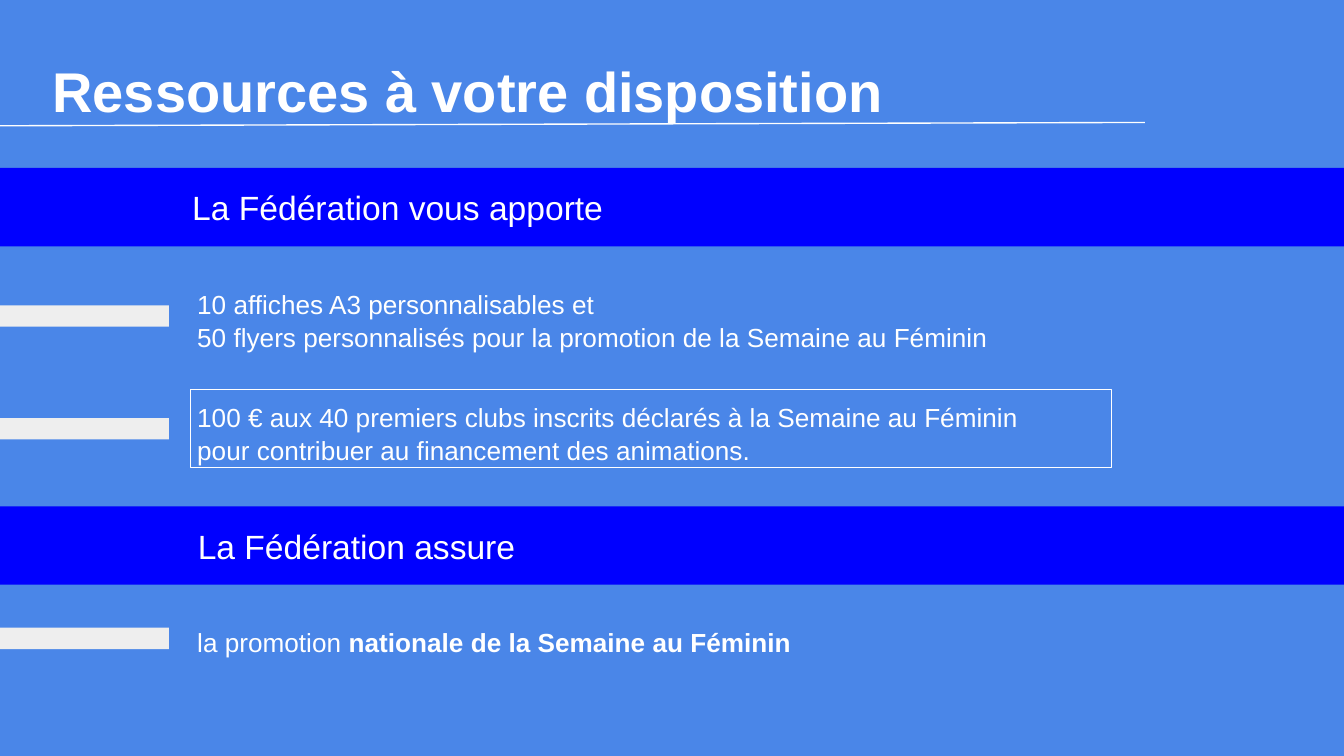
from lxml.etree import SubElement
from pptx import Presentation
from pptx.dml.color import RGBColor
from pptx.enum.shapes import MSO_CONNECTOR as CONN, MSO_SHAPE as SHAPE
from pptx.enum.text import MSO_ANCHOR as ANCHOR, MSO_AUTO_SIZE as AUTO, PP_ALIGN as ALIGN
from pptx.oxml.ns import qn
from pptx.util import Pt

WIDTH, HEIGHT = 720, 405


def color(value):
    return RGBColor.from_string(value)


def write(tf, paragraphs, size=14, bold=False, spacing=1.0, fill="FFFFFF",
          anchor=ANCHOR.TOP, left=7.2):
    """Fill a frame; each paragraph is a list of (text, bold) runs or a string."""
    tf.word_wrap = True
    tf.auto_size = AUTO.NONE
    tf.vertical_anchor = anchor
    tf.margin_left = Pt(left)
    tf.margin_top = tf.margin_right = tf.margin_bottom = Pt(7.2)
    for i, runs in enumerate(paragraphs):
        p = tf.add_paragraph() if i else tf.paragraphs[0]
        p.alignment = ALIGN.LEFT
        p.line_spacing = spacing
        for text, strong in [(runs, bold)] if isinstance(runs, str) else runs:
            r = p.add_run()
            r.text = text
            r.font.name = "Arial"
            r.font.size = Pt(size)
            r.font.bold = strong
            r.font.color.rgb = color(fill)


class Deck:
    """Style and current slide."""
    background, band_fill, dash_fill, white = "4A86E8", "0000FF", "EEEEEE", "FFFFFF"

    def __init__(self, prs):
        self.s = prs.slides.add_slide(prs.slide_layouts[5])
        fill = self.s.background.fill
        fill.solid()
        fill.fore_color.rgb = color(self.background)

    def title(self, text):
        sp = self.s.shapes.title
        sp.left, sp.top, sp.width, sp.height = Pt(20.9), Pt(19.4), Pt(678.2), Pt(72.7)
        write(sp.text_frame, [text], size=30, bold=True, spacing=1.1)

    def line(self, x1, y1, x2, y2):
        c = self.s.shapes.add_connector(CONN.STRAIGHT, Pt(x1), Pt(y1), Pt(x2), Pt(y2))
        c.line.color.rgb = color(self.white)
        c.line.width = Pt(0.75)
        SubElement(c._element.spPr, qn("a:effectLst"))

    def rect(self, x, y, w, h, fill=None, line=None):
        sp = self.s.shapes.add_shape(SHAPE.RECTANGLE, Pt(x), Pt(y), Pt(w), Pt(h))
        sp.shadow.inherit = False
        if fill:
            sp.fill.solid()
            sp.fill.fore_color.rgb = color(fill)
        else:
            sp.fill.background()
        if line:
            sp.line.color.rgb = color(line)
            sp.line.width = Pt(0.75)
        else:
            sp.line.fill.background()
        return sp

    def band(self, y, text, left):
        sp = self.rect(0, y, WIDTH, 42, fill=self.band_fill)
        write(sp.text_frame, [text], size=18, anchor=ANCHOR.MIDDLE, left=left)

    def item(self, y, dash_y, paragraphs):
        """Text with a pale dash at the left edge of the slide."""
        self.rect(0, dash_y, 90.5, 11.5, fill=self.dash_fill)
        h = 14 + 16 * len(paragraphs)
        sp = self.s.shapes.add_textbox(Pt(98.6), Pt(y), Pt(600.5), Pt(h))
        write(sp.text_frame, paragraphs, spacing=1.06)


def main():
    prs = Presentation()
    prs.slide_width, prs.slide_height = Pt(WIDTH), Pt(HEIGHT)
    deck = Deck(prs)
    deck.title("Ressources à votre disposition")
    deck.line(0, 67.4, 613.4, 65.6)

    deck.band(90, "La Fédération vous apporte", left=103)
    deck.item(146.4, 163.6, [
        "10 affiches A3 personnalisables et",
        "50 flyers personnalisés pour la promotion de la Semaine au Féminin"])
    deck.item(206.8, 224, [
        "100 € aux 40 premiers clubs inscrits déclarés à la Semaine au Féminin",
        "pour contribuer au financement des animations."])
    deck.rect(102.1, 208.7, 493.4, 41.7, line=deck.white)

    deck.band(271.3, "La Fédération assure", left=106)
    deck.item(327.6, 336.3, [
        [("la promotion ", False), ("nationale de la Semaine au Féminin", True)]])
    prs.save("out.pptx")


if __name__ == "__main__":
    main()
